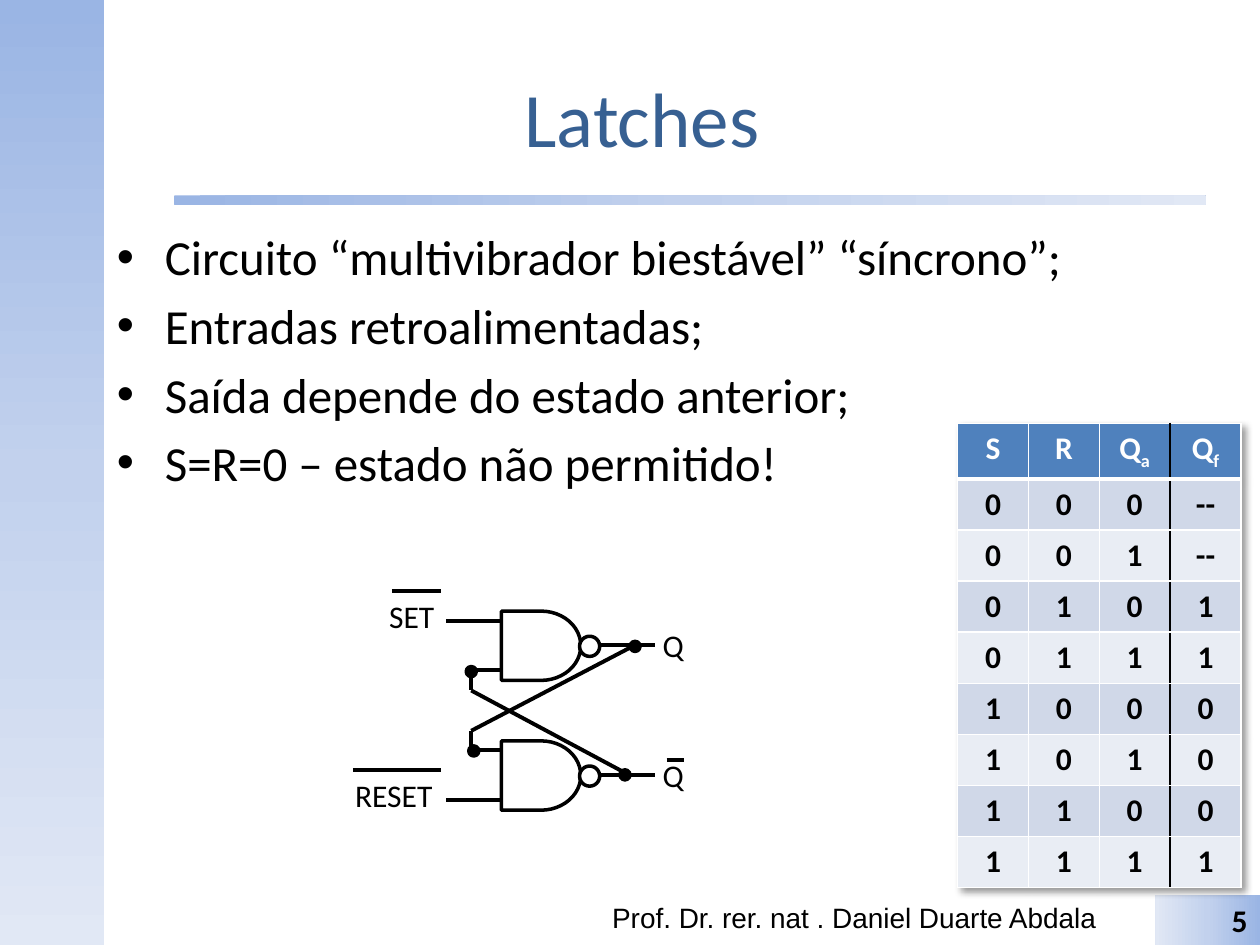
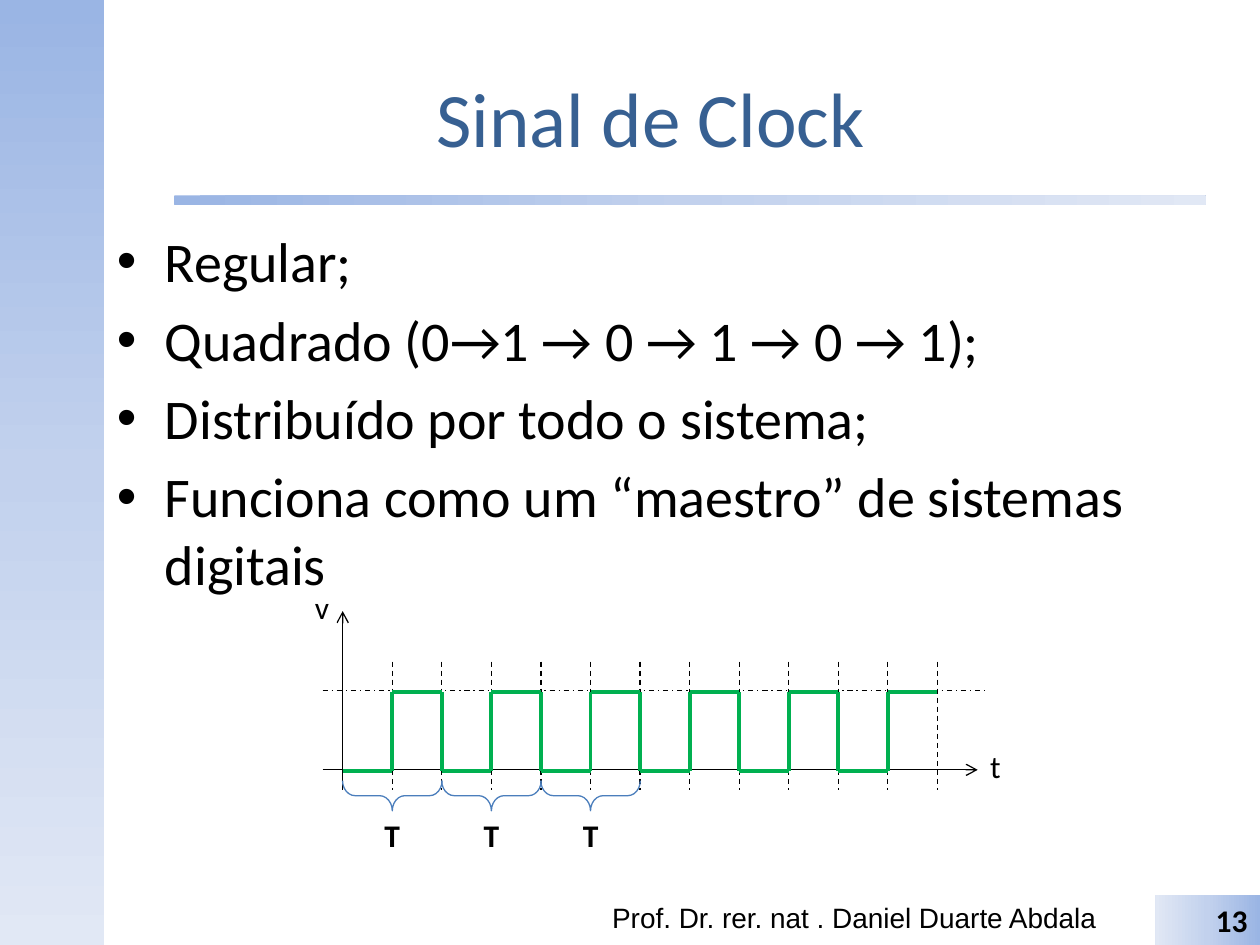
from copy import deepcopy

from lxml.etree import SubElement
from pptx import Presentation
from pptx.dml.color import RGBColor
from pptx.enum.dml import MSO_LINE as Dash
from pptx.enum.shapes import MSO_CONNECTOR as Connector, MSO_SHAPE as Shape
from pptx.enum.text import MSO_ANCHOR as Anchor, PP_ALIGN as Align
from pptx.oxml.ns import qn
from pptx.util import Inches, Pt

BLACK, WHITE = "000000", "FFFFFF"
TITLE_BLUE, HEADER_BLUE, BRACE_BLUE = "376092", "4F81BD", "4B7EBC"
ROW_DARK, ROW_LIGHT = "D0D8E8", "E9EDF4"
CLOCK_GREEN = "00B050"
BAND_STOPS = [(0, "9AB5E4"), (0.5, "C2D1ED"), (1, "E1E8F5")]
PROFESSOR = "Prof. Dr. rer. nat . Daniel Duarte Abdala"


def rgb(code):
    """Turn a hex string into a colour."""
    return RGBColor.from_string(code)


def inches(*lengths):
    """Turn plain numbers into lengths."""
    return [Inches(length) for length in lengths]


class Deck:
    """Holds the lecture style and the current slide."""

    def __init__(self):
        """Open an empty 10 by 7.5 inch presentation."""
        self.prs = Presentation()
        self.prs.slide_width, self.prs.slide_height = inches(10, 7.5)
        self.slide = None

    def new_slide(self, title, number):
        """Start a slide with bands, title, footer and page number."""
        self.slide = self.prs.slides.add_slide(self.prs.slide_layouts[6])
        self.band((0, 0, 0.83, 7.5), 90)
        self.band((1.38, 1.55, 8.19, 0.08), 0, Shape.ROUNDED_RECTANGLE)
        self.text(title, (0.83, 0.3, 8.67, 1.25), 44, TITLE_BLUE,
                  align=Align.CENTER, anchor=Anchor.MIDDLE, wrap=True)
        self.text(PROFESSOR, (4.76, 7.1, 4.19, 0.4), 16, font="Arial", wrap=True)
        page = self.band((9.17, 7.1, 0.83, 0.4), 180).text_frame.paragraphs[0]
        page.text = str(number)
        self.style(page, 18, bold=True, align=Align.RIGHT)

    def style(self, paragraph, size, colour=BLACK, bold=False, font="Calibri",
              align=Align.LEFT):
        """Set the font and alignment of a paragraph."""
        paragraph.alignment = align
        paragraph.font.size = Pt(size)
        paragraph.font.bold = bold
        paragraph.font.name = font
        paragraph.font.color.rgb = rgb(colour)

    def shape(self, kind, box, fill=None, line=None, width=2):
        """Add a preset shape without shadow."""
        shape = self.slide.shapes.add_shape(kind, *inches(*box))
        shape.shadow.inherit = False
        if fill:
            shape.fill.solid()
            shape.fill.fore_color.rgb = rgb(fill)
        else:
            shape.fill.background()
        if line:
            shape.line.color.rgb = rgb(line)
            shape.line.width = Pt(width)
        else:
            shape.line.fill.background()
        return shape

    def band(self, box, clockwise, kind=Shape.RECTANGLE):
        """Add a shape with the blue gradient."""
        band = self.shape(kind, box)
        band.fill.gradient()
        band.fill.gradient_angle = -clockwise % 360
        stops = next(band.element.iter(qn("a:gsLst")))
        stops.insert(1, deepcopy(stops[0]))
        for stop, (position, code) in zip(band.fill.gradient_stops, BAND_STOPS):
            stop.position = position
            stop.color.rgb = rgb(code)
        return band

    def text(self, words, box, size=18, colour=BLACK, bold=False, font="Calibri",
             align=Align.LEFT, anchor=Anchor.TOP, wrap=False):
        """Add a one-paragraph text box."""
        frame = self.slide.shapes.add_textbox(*inches(*box)).text_frame
        frame.word_wrap = wrap
        frame.vertical_anchor = anchor
        frame.paragraphs[0].text = words
        self.style(frame.paragraphs[0], size, colour, bold, font, align)

    def bullets(self, points, height, size):
        """Add the bulleted body text."""
        frame = self.slide.shapes.add_textbox(*inches(0.83, 1.75, 8.67, height)).text_frame
        frame.word_wrap = True
        for index, point in enumerate(points):
            paragraph = frame.add_paragraph() if index else frame.paragraphs[0]
            paragraph.text = point
            props = paragraph._p.get_or_add_pPr()
            props.set("marL", str(Inches(0.38)))
            props.set("indent", str(-Inches(0.38)))
            SubElement(props, qn("a:buFont"), typeface="Arial")
            SubElement(props, qn("a:buChar"), char="•")
            paragraph.space_before = Pt(size * 0.2)
            self.style(paragraph, size)

    def line(self, start, end, colour=BLACK, width=2.25, dash=None, arrow=False):
        """Add a straight line, dashed or with an arrowhead if asked."""
        line = self.slide.shapes.add_connector(
            Connector.STRAIGHT, *inches(*start, *end))
        line.line.color.rgb = rgb(colour)
        line.line.width = Pt(width)
        if dash:
            line.line.dash_style = dash
        if arrow:
            SubElement(line.line._get_or_add_ln(), qn("a:tailEnd"), type="arrow")
        SubElement(line.element.spPr, qn("a:effectLst"))

    def truth_table(self, header, rows, box, divider):
        """Add a banded table with a black rule left of the divider column."""
        cells = [header, *rows]
        frame = self.slide.shapes.add_table(len(cells), len(header), *inches(*box))
        table = frame.table
        self.table_shadow(table)
        for r, values in enumerate(cells):
            fill = (ROW_DARK if r % 2 else ROW_LIGHT) if r else HEADER_BLUE
            for c, value in enumerate(values):
                cell = table.cell(r, c)
                cell.vertical_anchor = Anchor.TOP
                paragraph = cell.text_frame.paragraphs[0]
                base, _, subscript = value.partition("_")
                paragraph.add_run().text = base
                if subscript:
                    run = paragraph.add_run()
                    run.text = subscript
                    run._r.get_or_add_rPr().set("baseline", "-25000")
                self.style(paragraph, 18, BLACK if r else WHITE, True, align=Align.CENTER)
                self.cell_borders(cell, {
                    "L": (BLACK if c == divider else WHITE, 1),
                    "R": (BLACK if c == divider - 1 else WHITE, 1),
                    "T": (WHITE, 3 if r == 1 else 1),
                    "B": (WHITE, 1 if r else 3)})
                cell.fill.solid()
                cell.fill.fore_color.rgb = rgb(fill)

    def cell_borders(self, cell, borders):
        """Draw the given sides of a cell."""
        props = cell._tc.get_or_add_tcPr()
        for side, (code, width) in borders.items():
            edge = SubElement(props, qn(f"a:ln{side}"), w=str(Pt(width)))
            SubElement(SubElement(edge, qn("a:solidFill")), qn("a:srgbClr"), val=code)

    def table_shadow(self, table):
        """Give a table a soft shadow to the lower right."""
        props = table._tbl.tblPr
        effects = SubElement(props, qn("a:effectLst"))
        props.insert(0, effects)
        shadow = SubElement(effects, qn("a:outerShdw"), blurRad=str(Pt(4)),
                            dist=str(Pt(3)), dir="2700000", algn="tl", rotWithShape="0")
        tint = SubElement(shadow, qn("a:srgbClr"), val=BLACK)
        SubElement(tint, qn("a:alpha"), val="40000")


def latches(deck):
    """Build the SR latch slide."""
    deck.new_slide("Latches ", 5)
    deck.bullets(["Circuito “multivibrador biestável” “síncrono”;",
                  "Entradas retroalimentadas;",
                  "Saída depende do estado anterior;",
                  "S=R=0 – estado não permitido!"], 4.95, 28)
    next_states = ["--", "--", "1", "1", "0", "0", "0", "1"]
    rows = [[*f"{state:03b}", final] for state, final in enumerate(next_states)]
    deck.truth_table(["S", "R", "Q_a", "Q_f"], rows, (7.6, 3.36, 2.25, 3.65), 3)

    for top in (4.85, 5.88):
        deck.shape(Shape.FLOWCHART_DELAY, (3.98, top, 0.63, 0.55), WHITE, BLACK)
        deck.shape(Shape.OVAL, (4.6, top + 0.2, 0.16, 0.16), WHITE, BLACK)
        deck.line((4.76, top + 0.27), (5.2, top + 0.27))
        deck.text("Q", (5.16, top + 0.07, 0.41, 0.4))
    wires = [((3.54, 4.93), (3.98, 4.93)), ((3.7, 5.32), (3.98, 5.32)),
             ((3.72, 5.95), (3.98, 5.95)), ((3.54, 6.35), (3.98, 6.35)),
             ((5.04, 5.12), (3.74, 5.8)), ((5.01, 6.16), (3.74, 5.48)),
             ((3.74, 5.32), (3.74, 5.48)), ((3.74, 5.8), (3.74, 5.95))]
    overbars = [((5.29, 6.03), (5.43, 6.03)), ((2.8, 6.11), (3.5, 6.11)),
                ((3.11, 4.69), (3.5, 4.69))]
    for start, end in wires + overbars:
        deck.line(start, end)
    for left, top in [(5, 5.09), (4.92, 6.11), (3.7, 5.29), (3.72, 5.92)]:
        deck.shape(Shape.OVAL, (left, top, 0.08, 0.08), BLACK, BLACK)
    deck.text("SET", (2.99, 4.69, 0.59, 0.4))
    deck.text("RESET", (2.72, 6.11, 0.87, 0.4))


def clock_signal(deck):
    """Build the clock waveform slide."""
    deck.new_slide("Sinal de Clock", 13)
    deck.bullets(["Regular;",
                  "Quadrado (0→1 → 0 → 1 → 0 → 1);",
                  "Distribuído por todo o sistema;",
                  "Funciona como um “maestro” de sistemas digitais"], 3.42, 32)
    half_periods, low, high = 12, 6.12, 5.49
    edges = [2.72 + 4.72 / half_periods * i for i in range(half_periods + 1)]

    deck.line((2.56, 6.11), (7.76, 6.11), width=0.75, arrow=True)
    deck.line((2.72, 6.27), (2.72, 4.85), width=0.75, arrow=True)
    for x in edges[1:]:
        deck.line((x, 5.25), (x, 6.27), width=0.75, dash=Dash.DASH)
    deck.text("t", (7.76, 5.88, 0.29, 0.4))
    deck.text("v", (2.4, 4.62, 0.32, 0.4))
    deck.line((2.56, 5.48), (7.83, 5.48), width=0.75, dash=Dash.DASH_DOT)

    for i, (x, next_x) in enumerate(zip(edges, edges[1:])):
        level = high if i % 2 else low
        deck.line((x, level), (next_x, level), CLOCK_GREEN)
        if i:
            deck.line((x, low), (x, high), CLOCK_GREEN)
    for middle in edges[1:6:2]:
        brace = deck.shape(Shape.LEFT_BRACE, (middle - 0.12, 5.92, 0.24, 0.79),
                           line=BRACE_BLUE, width=0.75)
        brace.rotation = 270
        brace.adjustments[0] = 0.417
        deck.text("T", (middle - 0.16, 6.43, 0.32, 0.4), bold=True)


def main():
    """Build and save both slides."""
    deck = Deck()
    latches(deck)
    clock_signal(deck)
    deck.prs.save("out.pptx")


if __name__ == "__main__":
    main()
